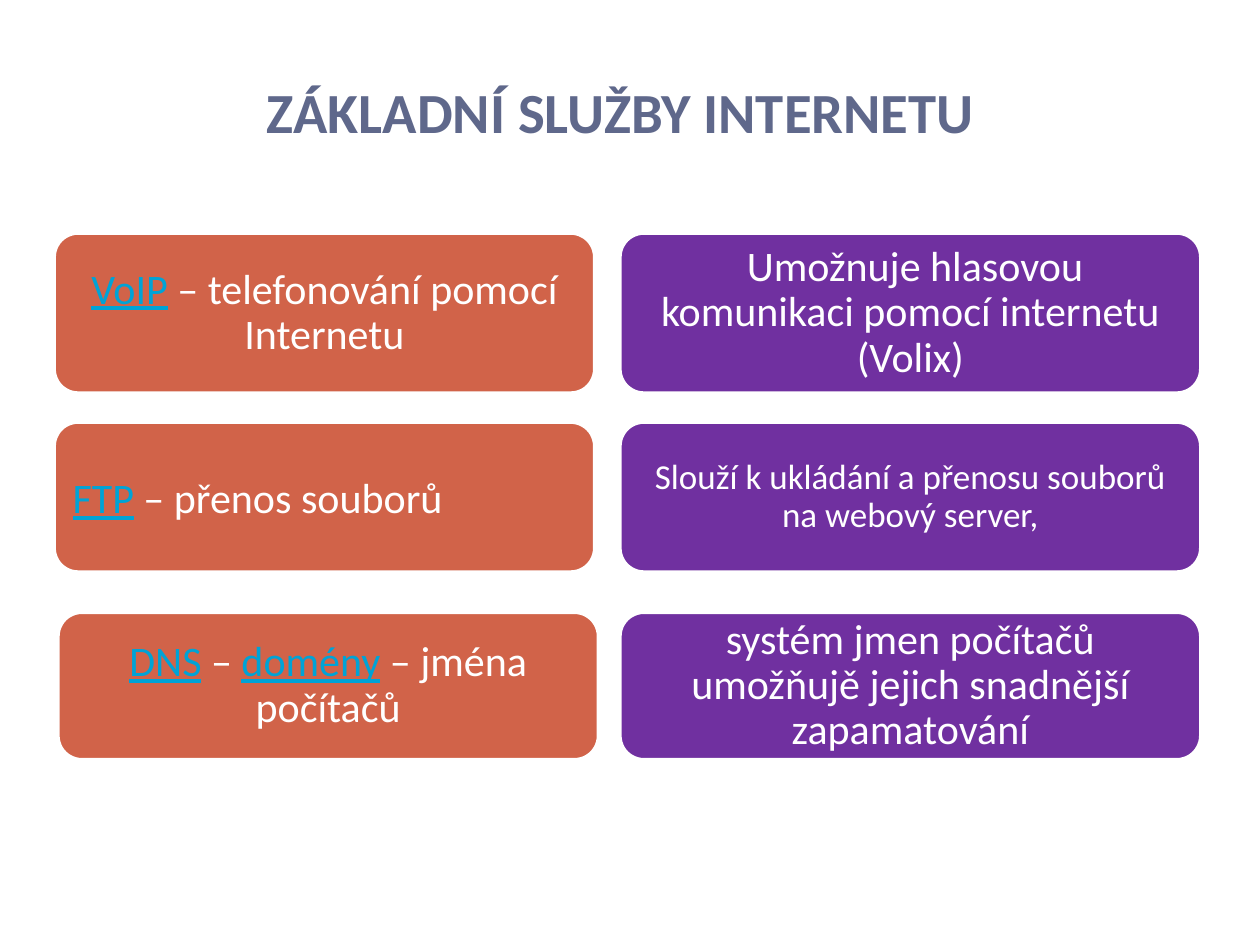
import pptx
import pptx.util
import pptx.dml.color
import pptx.enum.shapes
import pptx.enum.text
from dataclasses import dataclass

Inches = pptx.util.Inches
Pt = pptx.util.Pt
Align = pptx.enum.text.PP_ALIGN
Anchor = pptx.enum.text.MSO_ANCHOR


@dataclass(frozen=True)
class Theme:
    font: str = "Calibri"
    title_color: str = "5F688B"
    service_fill: str = "D16349"
    purpose_fill: str = "7030A0"
    text_color: str = "FFFFFF"
    term_color: str = "00A3D6"
    outline: str = "FFFFFF"
    title_size: float = 32.4
    body_size: float = 24
    small_size: float = 20
    outline_width: float = 2
    corner_radius: float = 0.19


def rgb(value):
    return pptx.dml.color.RGBColor.from_string(value)


class SlideBuilder:
    def __init__(self, slide, theme):
        self.slide = slide
        self.theme = theme

    def prepare_frame(self, frame, anchor, side, edge):
        frame.word_wrap = True
        frame.vertical_anchor = anchor
        frame.margin_left = frame.margin_right = Inches(side)
        frame.margin_top = frame.margin_bottom = Inches(edge)

    def add_run(self, paragraph, text, size, color, bold=False, underline=False):
        run = paragraph.add_run()
        run.text = text
        run.font.name = self.theme.font
        run.font.size = Pt(size)
        run.font.color.rgb = rgb(color)
        run.font.bold = bold
        run.font.underline = underline

    def title(self, text, left, top, width, height):
        box = self.slide.shapes.add_textbox(
            Inches(left), Inches(top), Inches(width), Inches(height))
        self.prepare_frame(box.text_frame, Anchor.BOTTOM, 0.1, 0.05)
        paragraph = box.text_frame.paragraphs[0]
        paragraph.alignment = Align.CENTER
        self.add_run(paragraph, text, self.theme.title_size,
                     self.theme.title_color, bold=True)

    def card(self, parts, fill, left, top, width, height,
             size=None, align=Align.CENTER, spacing=0.9):
        """Add a rounded card; parts are (text, is_term) pairs."""
        theme = self.theme
        card = self.slide.shapes.add_shape(
            pptx.enum.shapes.MSO_SHAPE.ROUNDED_RECTANGLE,
            Inches(left), Inches(top), Inches(width), Inches(height))
        card.adjustments[0] = theme.corner_radius / height
        card.shadow.inherit = False
        card.fill.solid()
        card.fill.fore_color.rgb = rgb(fill)
        card.line.color.rgb = rgb(theme.outline)
        card.line.width = Pt(theme.outline_width)
        self.prepare_frame(card.text_frame, Anchor.MIDDLE, 0.09, 0.05)
        paragraph = card.text_frame.paragraphs[0]
        paragraph.alignment = align
        paragraph.line_spacing = spacing
        for text, is_term in parts:
            self.add_run(paragraph, text, size or theme.body_size,
                         theme.term_color if is_term else theme.text_color,
                         underline=is_term)


def main():
    theme = Theme()
    deck = pptx.Presentation()
    deck.slide_width = Inches(10)
    deck.slide_height = Inches(7.5)
    builder = SlideBuilder(deck.slides.add_slide(deck.slide_layouts[6]), theme)

    # Heading
    builder.title("ZÁKLADNÍ SLUŽBY INTERNETU", 0.24, 0.52, 9.37, 0.68)

    # Each row: top, height, service left edge, service, purpose, style options
    rows = [
        (1.85, 1.27, 0.43,
         [("VoIP", True), (" – telefonování pomocí Internetu", False)], {},
         " Umožnuje hlasovou komunikaci pomocí internetu (Volix)", {}),
        (3.35, 1.19, 0.43,
         [("FTP", True), (" – přenos souborů", False)],
         {"align": Align.LEFT, "spacing": 1.0},
         "Slouží k ukládání a přenosu souborů na webový server,",
         {"size": theme.small_size}),
        (4.86, 1.17, 0.46,
         [("DNS", True), (" – ", False), ("domény", True),
          (" – jména počítačů", False)], {},
         "systém jmen počítačů umožňujě jejich snadnější zapamatování", {}),
    ]

    # Services on the left, their purpose on the right
    for top, height, left, service, service_style, purpose, purpose_style in rows:
        builder.card([(purpose, False)], theme.purpose_fill,
                     4.92, top, 4.61, height, **purpose_style)
        builder.card(service, theme.service_fill,
                     left, top, 4.29, height, **service_style)

    deck.save("out.pptx")


if __name__ == "__main__":
    main()
